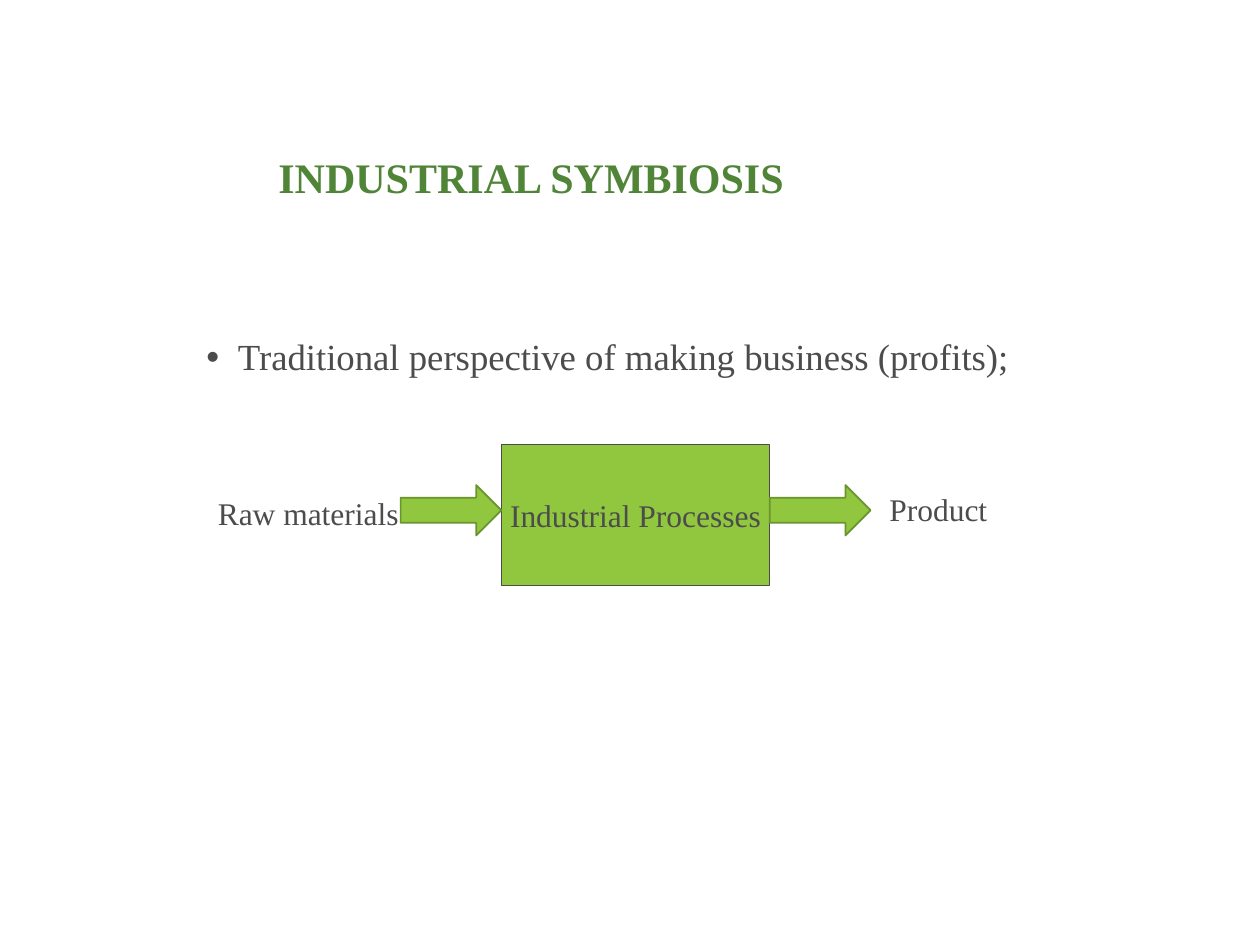
from lxml.etree import SubElement
from pptx import Presentation
from pptx.dml.color import RGBColor
from pptx.enum.shapes import MSO_SHAPE as Shape
from pptx.enum.text import MSO_ANCHOR as Anchor, MSO_AUTO_SIZE as AutoSize, PP_ALIGN as Align
from pptx.oxml.ns import qn
from pptx.util import Inches, Pt

WIDTH, HEIGHT = 10, 7.5
GREEN, DARK_GREEN, TITLE_GREEN, GREY = "90C73E", "6B932E", "508538", "4C4C4C"
BOX_LEFT, BOX_WIDTH = 3.98, 2.13
ARROW_WIDTH, ARROW_HEIGHT = 0.8, 0.4


def color(value):
    """Turn a hex string into a colour."""
    return RGBColor.from_string(value)


def apply(target, values):
    """Set each attribute of the target from a dict."""
    for name, value in values.items():
        setattr(target, name, value)


def place(left, top, width, height):
    """Return a frame given in inches as slide lengths."""
    return [Inches(length) for length in (left, top, width, height)]


def write(shape, text, size, hex_color=GREY, bold=False, frame=None, paragraph=None):
    """Write one formatted paragraph into a shape and return it."""
    apply(shape.text_frame, frame or {})
    shape.text_frame.text = text
    line = shape.text_frame.paragraphs[0]
    apply(line, paragraph or {})
    font = line.runs[0].font
    apply(font, {"name": "Times New Roman", "size": Pt(size), "bold": bold})
    font.color.rgb = color(hex_color)
    return line


def add_title(slide, text):
    """Move and format the title placeholder."""
    title = slide.shapes.title
    apply(title, dict(zip(("left", "top", "width", "height"), place(1.63, 1.17, 5.17, 0.6))))
    write(title, text, 24, TITLE_GREEN, True,
          {"vertical_anchor": Anchor.TOP, "margin_top": Inches(0.08), "word_wrap": True},
          {"alignment": Align.CENTER, "line_spacing": 0.9})


def add_bullet(slide, text):
    """Add the body text with a hanging bullet."""
    body = slide.shapes.add_textbox(*place(1.54, 2.13, 6.7, 3.87))
    line = write(body, text, 21, frame={"word_wrap": True, "margin_top": Inches(0.56)},
                 paragraph={"alignment": Align.JUSTIFY, "line_spacing": 0.9})
    properties = line._p.get_or_add_pPr()
    apply_indent = {"marL": Inches(0.25), "indent": -Inches(0.25)}
    for name, value in apply_indent.items():
        properties.set(name, str(value))
    SubElement(properties, qn("a:buFont"), typeface="Arial")
    SubElement(properties, qn("a:buChar"), char="•")


def add_label(slide, text, left, top, width):
    """Add an unwrapped label beside the flow."""
    label = slide.shapes.add_textbox(*place(left, top, width, 0.4))
    write(label, text, 18, frame={"word_wrap": False, "auto_size": AutoSize.SHAPE_TO_FIT_TEXT})


def add_block(slide, kind, frame, line_color, line_width):
    """Add a green preset shape with an outline."""
    block = slide.shapes.add_shape(kind, *place(*frame))
    block.shadow.inherit = False
    block.fill.solid()
    block.fill.fore_color.rgb = color(GREEN)
    block.line.color.rgb = color(line_color)
    block.line.width = Pt(line_width)
    return block


def main():
    """Build the slide and save it."""
    presentation = Presentation()
    apply(presentation, {"slide_width": Inches(WIDTH), "slide_height": Inches(HEIGHT)})
    slide = presentation.slides.add_slide(presentation.slide_layouts[5])
    add_title(slide, "INDUSTRIAL SYMBIOSIS")
    add_bullet(slide, "Traditional perspective of making business (profits);")
    process = add_block(slide, Shape.RECTANGLE, (BOX_LEFT, 3.53, BOX_WIDTH, 1.12), GREY, 0.75)
    write(process, "Industrial Processes", 18,
          frame={"word_wrap": False, "vertical_anchor": Anchor.MIDDLE},
          paragraph={"alignment": Align.CENTER})
    add_label(slide, "Raw materials", 1.63, 3.87, 1.65)
    add_label(slide, "Product", 6.96, 3.84, 0.99)
    for left in (BOX_LEFT - ARROW_WIDTH, BOX_LEFT + BOX_WIDTH):
        add_block(slide, Shape.RIGHT_ARROW, (left, 3.85, ARROW_WIDTH, ARROW_HEIGHT), DARK_GREEN, 1)
    presentation.save("out.pptx")


if __name__ == "__main__":
    main()
